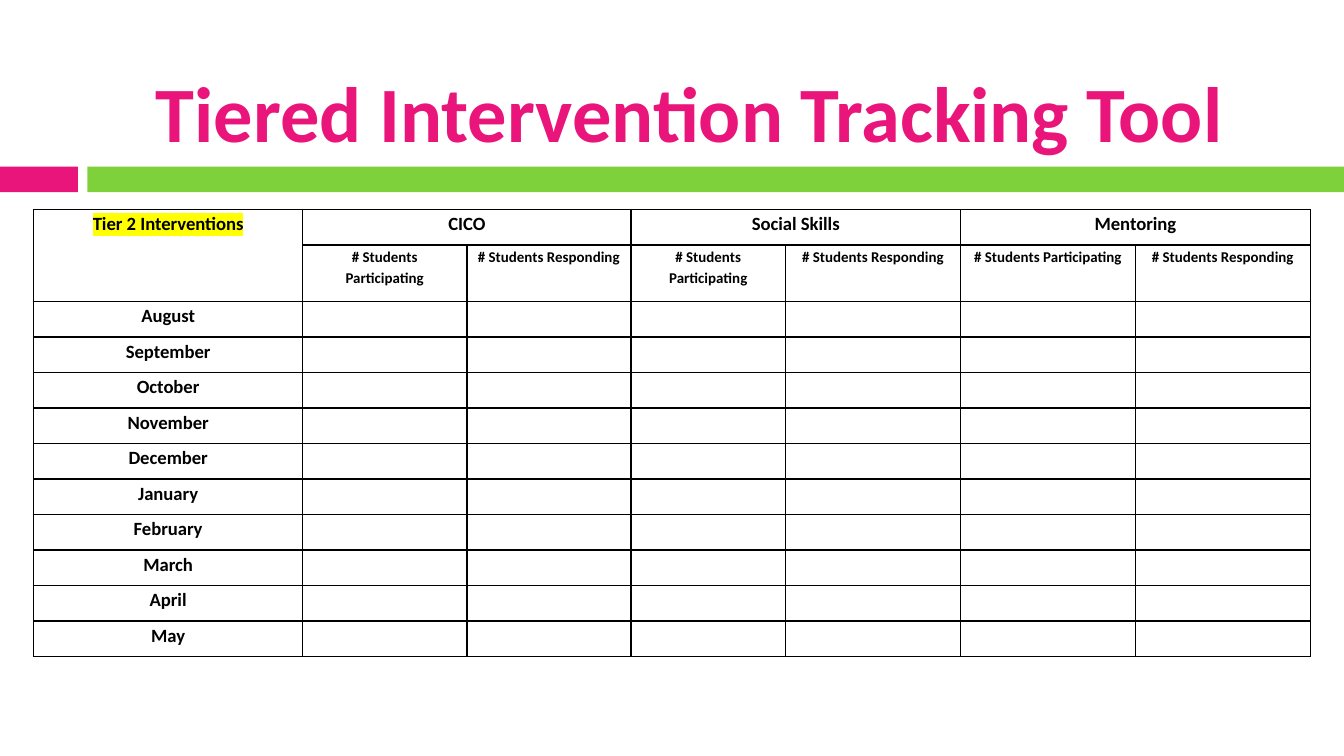
"""Build the tiered intervention tracking slide."""
from lxml.etree import SubElement
from pptx import Presentation
from pptx.dml.color import RGBColor as RGB
from pptx.enum.shapes import MSO_SHAPE as SHAPE
from pptx.enum.text import MSO_ANCHOR as ANCHOR, PP_ALIGN as ALIGN
from pptx.oxml import parse_xml
from pptx.oxml.ns import nsdecls, qn
from pptx.util import Inches, Pt

TITLE = "Tiered Intervention Tracking Tool"
TIER = "Tier 2 Interventions"
INTERVENTIONS = ["CICO", "Social Skills", "Mentoring"]
MEASURES = ["# Students Participating", "# Students Responding"]
MONTHS = ["August", "September", "October", "November", "December",
          "January", "February", "March", "April", "May"]

THEME = {
    "font": "Calibri", "pink": "EA157A", "green": "7FD13B",
    "ink": "000000", "highlight": "FFFF00",
    "title": 42, "label": 10, "measure": 8, "border": 1,
}
SLIDE_WIDTH = 10
SLIDE_HEIGHT = SLIDE_WIDTH * 9 / 16
BARS = [(0, 0.58, "pink"), (0.65, 9.35, "green")]
BAR_TOP, BAR_HEIGHT = 1.24, 0.19
TITLE_BOX = (0.67, 0.13, 8.92, 1.1)
TABLE_BOX = (0.25, 1.56, 9.5, 3.33)
COLUMN_SHARES = [2, 1.22, 1.22, 1.15, 1.3, 1.3, 1.3]
MEASURE_HEIGHT = 0.42


def style_text(paragraph, size, color):
    paragraph.alignment = ALIGN.CENTER
    for run in paragraph.runs:
        run.font.name = THEME["font"]
        run.font.size = Pt(size)
        run.font.bold = True
        run.font.color.rgb = RGB.from_string(THEME[color])


def add_borders(cell):
    properties = cell._tc.get_or_add_tcPr()
    for index, side in enumerate(("lnL", "lnR", "lnT", "lnB")):
        properties.insert(index, parse_xml(
            f'<a:{side} {nsdecls("a")} w="{Pt(THEME["border"])}"><a:solidFill>'
            f'<a:srgbClr val="{THEME["ink"]}"/></a:solidFill></a:{side}>'))


def format_cell(cell, size):
    cell.fill.background()
    add_borders(cell)
    cell.margin_left = cell.margin_right = Inches(0.07)
    cell.margin_top = cell.margin_bottom = 0
    paragraph = cell.text_frame.paragraphs[0]
    paragraph.line_spacing = 1.15
    paragraph.space_after = Pt(10)
    style_text(paragraph, size, "ink")
    if not paragraph.runs:
        SubElement(paragraph._p, qn("a:endParaRPr"), sz=str(size * 100))


def highlight(run):
    fill = run._r.get_or_add_rPr().find(qn("a:solidFill"))
    fill.addnext(parse_xml(
        f'<a:highlight {nsdecls("a")}><a:srgbClr val="{THEME["highlight"]}"/></a:highlight>'))


def add_bars(slide):
    for left, width, color in BARS:
        bar = slide.shapes.add_shape(
            SHAPE.RECTANGLE, *map(Inches, (left, BAR_TOP, width, BAR_HEIGHT)))
        bar.shadow.inherit = False
        bar.fill.solid()
        bar.fill.fore_color.rgb = RGB.from_string(THEME[color])
        bar.line.fill.background()


def add_title(slide):
    title = slide.shapes.title
    title.left, title.top, title.width, title.height = map(Inches, TITLE_BOX)
    title.text_frame.text = TITLE
    title.text_frame.vertical_anchor = ANCHOR.BOTTOM
    style_text(title.text_frame.paragraphs[0], THEME["title"], "pink")


def add_tracker(slide):
    row_count = len(MONTHS) + 2
    tracker = slide.shapes.add_table(
        row_count, len(COLUMN_SHARES), *map(Inches, TABLE_BOX)).table
    tracker.first_row = tracker.horz_banding = False
    for column, share in zip(tracker.columns, COLUMN_SHARES):
        column.width = Inches(TABLE_BOX[2] * share / sum(COLUMN_SHARES))
    row_height = (TABLE_BOX[3] - MEASURE_HEIGHT) / (row_count - 1)
    for index, row in enumerate(tracker.rows):
        row.height = Inches(MEASURE_HEIGHT if index == 1 else row_height)

    tier = tracker.cell(0, 0)
    tier.text_frame.text = TIER
    tier.merge(tracker.cell(1, 0))
    for group, intervention in enumerate(INTERVENTIONS):
        first = 1 + group * len(MEASURES)
        heading = tracker.cell(0, first)
        heading.text_frame.text = intervention
        heading.merge(tracker.cell(0, first + len(MEASURES) - 1))
        for offset, measure in enumerate(MEASURES):
            tracker.cell(1, first + offset).text_frame.text = measure
    for index, month in enumerate(MONTHS, 2):
        tracker.cell(index, 0).text_frame.text = month

    for index, row in enumerate(tracker.rows):
        for column, cell in enumerate(row.cells):
            format_cell(cell, THEME["measure" if index == 1 and column else "label"])
    highlight(tier.text_frame.paragraphs[0].runs[0])


def main():
    deck = Presentation()
    deck.slide_width, deck.slide_height = Inches(SLIDE_WIDTH), Inches(SLIDE_HEIGHT)
    slide = deck.slides.add_slide(deck.slide_layouts[5])
    add_bars(slide)
    add_title(slide)
    add_tracker(slide)
    deck.save("out.pptx")


if __name__ == "__main__":
    main()
